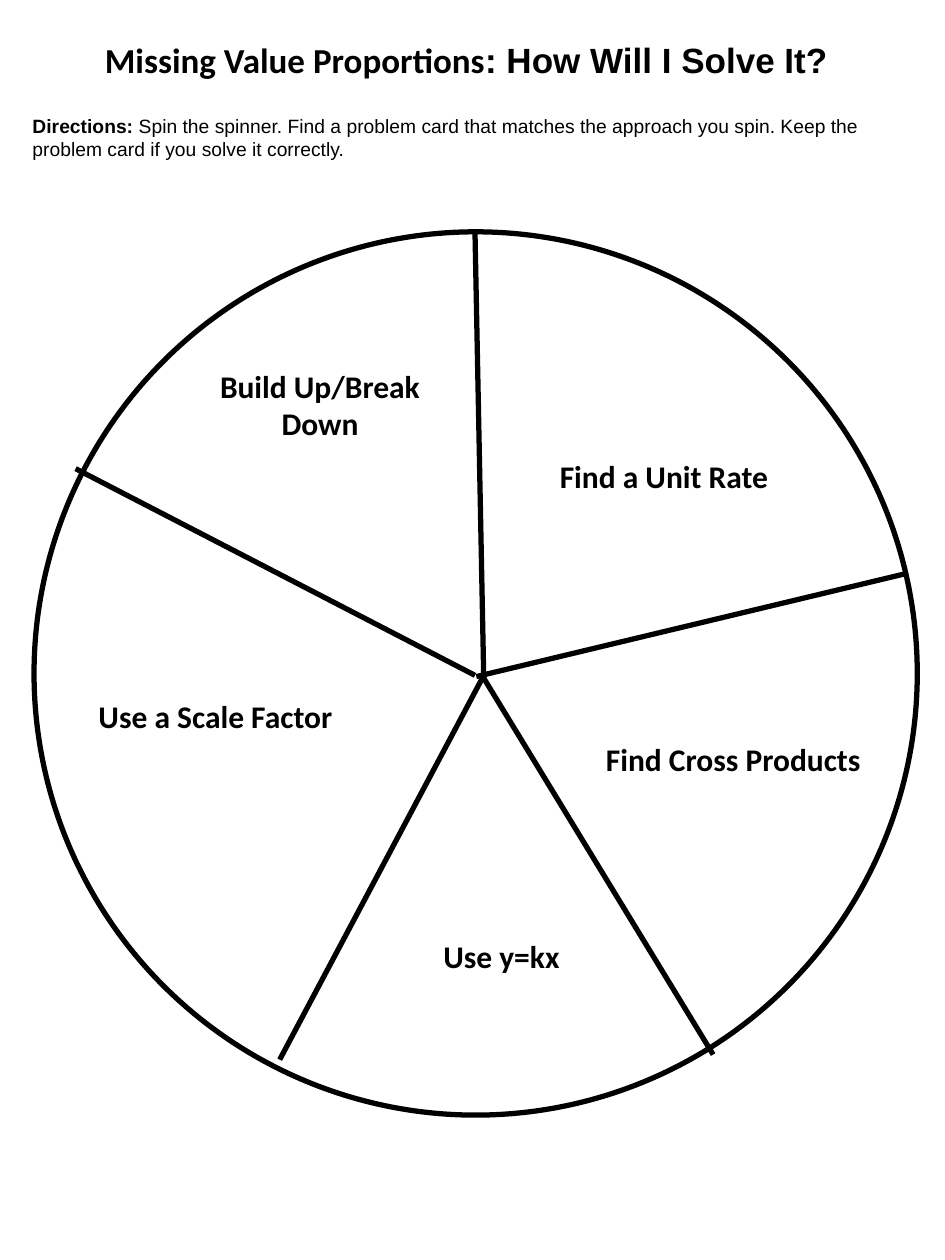
"""Build a five-part spinner worksheet on ways to solve missing value proportions."""
from lxml import etree
from pptx import Presentation
from pptx.dml.color import RGBColor
from pptx.enum.shapes import MSO_CONNECTOR, MSO_SHAPE
from pptx.enum.text import MSO_ANCHOR, PP_ALIGN
from pptx.oxml.ns import qn
from pptx.util import Pt

RECTANGLE, OVAL = MSO_SHAPE.RECTANGLE, MSO_SHAPE.OVAL
STRAIGHT = MSO_CONNECTOR.STRAIGHT
MIDDLE = MSO_ANCHOR.MIDDLE
LEFT, CENTER = PP_ALIGN.LEFT, PP_ALIGN.CENTER
COLORS = {"paper": "FFFFFF", "ink": "000000"}
PAPER, INK = (RGBColor.from_string(COLORS[name]) for name in ("paper", "ink"))


def write(box, alignment, runs):
    frame = box.text_frame
    frame.word_wrap = True
    frame.vertical_anchor = MIDDLE
    paragraph = frame.paragraphs[0]
    paragraph.alignment = alignment
    for text, font_format in runs:
        run = paragraph.add_run()
        run.text = text
        run.font.color.rgb = INK
        for attribute, value in font_format.items():
            setattr(run.font, attribute, value)


def add_panel(kind, place, outline, width):
    panel = slide.shapes.add_shape(kind, *map(Pt, place))
    panel.shadow.inherit = False
    panel.fill.solid()
    panel.fill.fore_color.rgb = PAPER
    panel.line.color.rgb = outline
    panel.line.width = Pt(width)
    return panel


prs = Presentation()
prs.slide_width, prs.slide_height = Pt(540), Pt(720)
slide = prs.slides.add_slide(prs.slide_layouts[6])

title_font = {"name": "Calibri", "size": Pt(20), "bold": True}
directions_font = {"name": "Arial", "size": Pt(11), "bold": False}
approach_font = {"name": "Calibri", "size": Pt(18), "bold": True}

headings = [
    (CENTER, [
        ("Missing Value Proportions", title_font),
        (": How Will I Solve It? ", {**title_font, "name": "Arial"}),
    ]),
    (LEFT, [
        ("Directions:", {**directions_font, "bold": True}),
        (" Spin the spinner. Find a problem card that matches the approach you spin. "
         "Keep the problem card if you solve it correctly.", directions_font),
    ]),
]
heading_height = 44.64
for row, (alignment, runs) in enumerate(headings):
    place = (11.52, 11.52 + row * heading_height, 515.52, heading_height)
    write(add_panel(RECTANGLE, place, PAPER, 1), alignment, runs)

add_panel(OVAL, (19.44, 132.48, 504.72, 504.72), INK, 3)

spokes = [
    (271.44, 132.48, 276.48, 389.52),
    (271.44, 385.92, 43.2, 267.84),
    (272.16, 386.64, 518.4, 327.6),
    (276.48, 385.92, 159.84, 605.52),
    (275.04, 385.2, 407.52, 602.64),
]
for ends in spokes:
    spoke = slide.shapes.add_connector(STRAIGHT, *map(Pt, ends))
    spoke.line.color.rgb = INK
    spoke.line.width = Pt(3)
    etree.SubElement(spoke._element.spPr, qn("a:effectLst"))

approaches = [
    ("Build Up/Break Down", 100.8, 184.32),
    ("Find a Unit Rate", 297.36, 225.36),
    ("Use a Scale Factor", 41.04, 362.16),
    ("Use y=kx", 204.48, 499.68),
    ("Find Cross Products", 336.96, 386.64),
]
for approach, left, top in approaches:
    label = slide.shapes.add_textbox(Pt(left), Pt(top), Pt(164.16), Pt(93.6))
    write(label, CENTER, [(approach, approach_font)])

prs.save("out.pptx")
